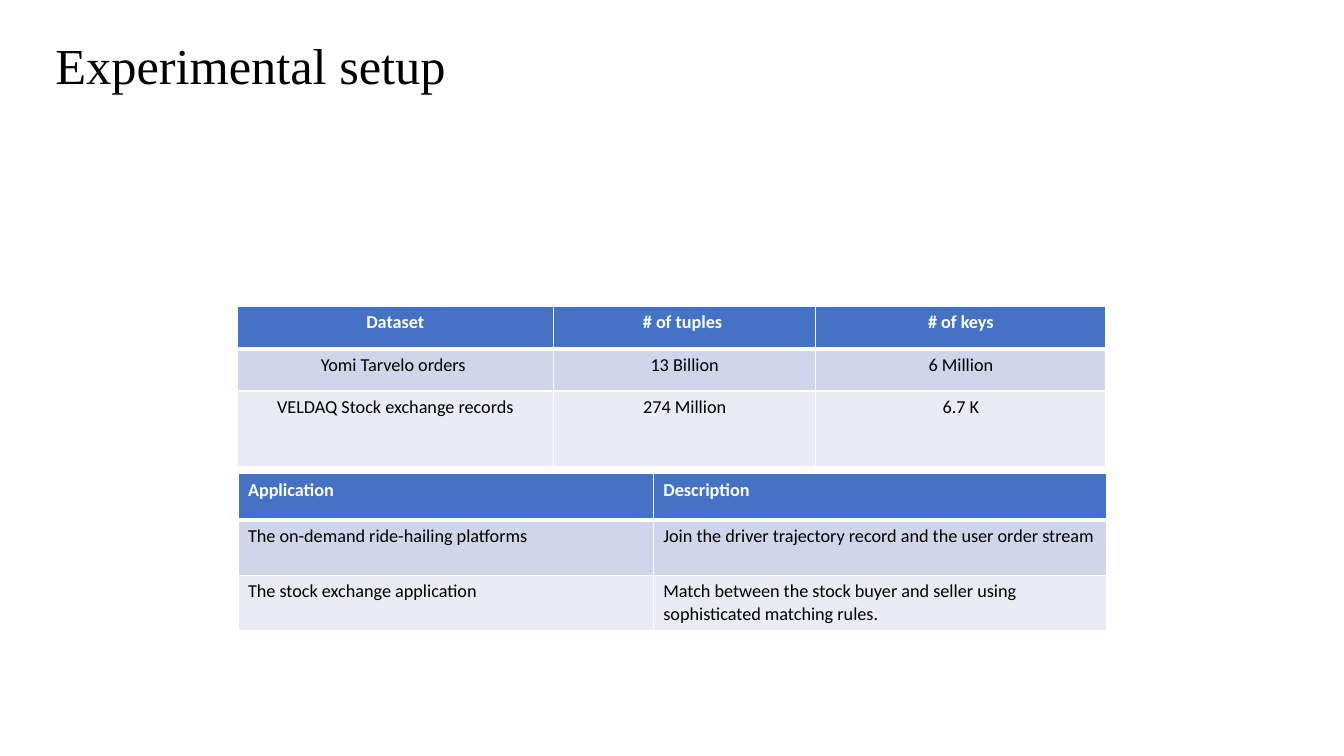
from lxml.etree import SubElement
from pptx import Presentation
from pptx.dml.color import RGBColor
from pptx.enum.text import MSO_ANCHOR, PP_ALIGN
from pptx.oxml.ns import qn
from pptx.util import Inches, Pt

BLACK = RGBColor(0x00, 0x00, 0x00)
WHITE = RGBColor(0xFF, 0xFF, 0xFF)
HEADER_BLUE = RGBColor(0x44, 0x72, 0xC4)
BAND_DARK = RGBColor(0xCF, 0xD5, 0xEA)
BAND_LIGHT = RGBColor(0xE9, 0xEB, 0xF5)
ROW_FILLS = [HEADER_BLUE, BAND_DARK, BAND_LIGHT]

DATASETS = [
    ["Dataset", "# of tuples ", "# of keys"],
    ["Yomi Tarvelo orders ", "13 Billion", "6 Million"],
    ["VELDAQ Stock exchange records", "274 Million", "6.7 K"],
]
APPLICATIONS = [
    ["Application", "Description"],
    ["The on-demand ride-hailing platforms",
     "Join the driver trajectory record and the user order stream"],
    ["The stock exchange application",
     "Match between the stock buyer and seller using sophisticated matching rules."],
]


def style_run(run, size, font, color, bold=False):
    run.font.size = Pt(size)
    run.font.name = font
    run.font.color.rgb = color
    run.font.bold = bold


def add_title(slide, text):
    title = slide.shapes.title
    title.left, title.top = Inches(0.45), Inches(0.27)
    title.width, title.height = Inches(8.42), Inches(0.81)
    frame = title.text_frame
    frame.text = text
    frame.vertical_anchor = MSO_ANCHOR.MIDDLE
    heading = frame.paragraphs[0]
    heading.alignment = PP_ALIGN.LEFT
    heading.line_spacing = 0.9
    style_run(heading.runs[0], 36, "Times New Roman", BLACK)


def set_borders(cell, row):
    """White rules, with a thicker one below the header row."""
    widths = {"a:lnL": 1, "a:lnR": 1,
              "a:lnT": 3 if row == 1 else 1,
              "a:lnB": 3 if row == 0 else 1}
    properties = cell._tc.get_or_add_tcPr()
    for tag, width in widths.items():
        line = SubElement(properties, qn(tag), w=str(Pt(width)))
        fill = SubElement(line, qn("a:solidFill"))
        SubElement(fill, qn("a:srgbClr"), val=str(WHITE))


def add_banded_table(slide, left, top, col_widths, row_heights, rows, alignment):
    table = slide.shapes.add_table(
        len(rows), len(col_widths), Inches(left), Inches(top),
        Inches(sum(col_widths)), Inches(sum(row_heights))).table
    for column, width in zip(table.columns, col_widths):
        column.width = Inches(width)
    for r, texts in enumerate(rows):
        table.rows[r].height = Inches(row_heights[r])
        for c, text in enumerate(texts):
            cell = table.cell(r, c)
            set_borders(cell, r)
            cell.fill.solid()
            cell.fill.fore_color.rgb = ROW_FILLS[r]
            cell.text_frame.text = text
            paragraph = cell.text_frame.paragraphs[0]
            paragraph.alignment = alignment
            is_header = r == 0
            style_run(paragraph.runs[0], 13, "Calibri",
                      WHITE if is_header else BLACK, is_header)


def main():
    presentation = Presentation()
    presentation.slide_width = Inches(13.33)
    presentation.slide_height = Inches(7.5)
    slide = presentation.slides.add_slide(presentation.slide_layouts[5])

    add_title(slide, "Experimental setup")

    # Applications, below the datasets
    add_banded_table(slide, 2.36, 4.7, [4.12, 4.5], [0.46, 0.55, 0.55],
                     APPLICATIONS, PP_ALIGN.LEFT)

    # Datasets
    add_banded_table(slide, 2.35, 3.04, [3.14, 2.6, 2.88], [0.42, 0.42, 0.75],
                     DATASETS, PP_ALIGN.CENTER)

    presentation.save("out.pptx")


if __name__ == "__main__":
    main()
